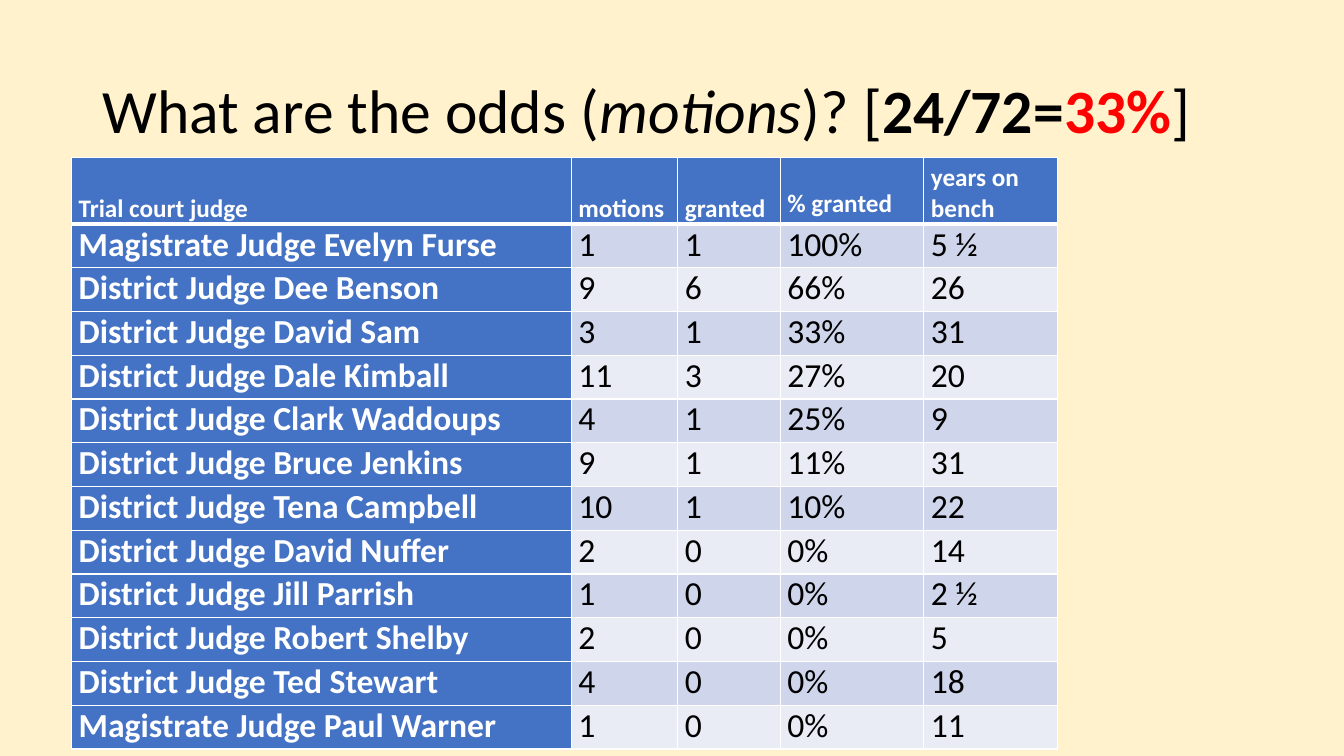
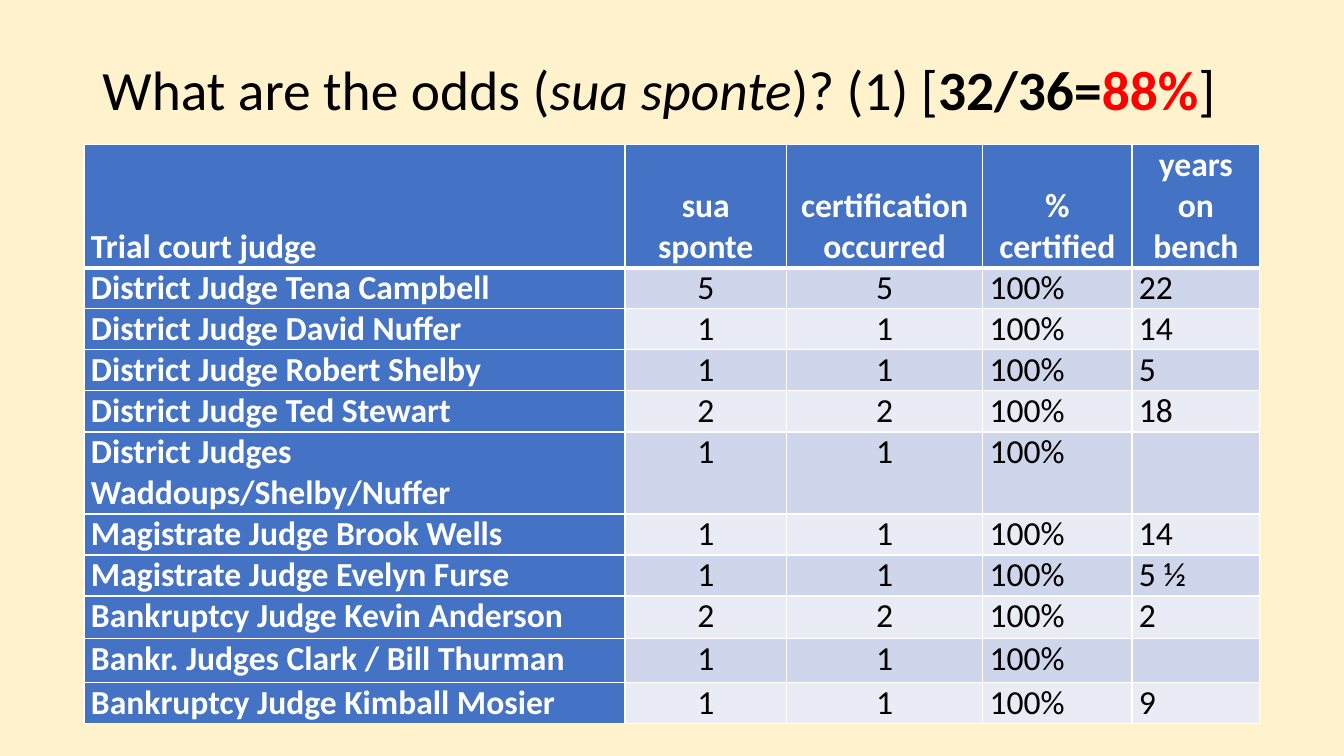
from lxml import etree
from pptx import Presentation
from pptx.dml.color import RGBColor
from pptx.enum.text import MSO_ANCHOR, MSO_AUTO_SIZE, PP_ALIGN
from pptx.oxml.ns import qn
from pptx.util import Pt

CREAM = RGBColor(0xFF, 0xF2, 0xCC)
BLUE = RGBColor(0x44, 0x72, 0xC4)
BAND_DARK = RGBColor(0xCF, 0xD5, 0xEA)
BAND_LIGHT = RGBColor(0xE9, 0xEB, 0xF5)
WHITE = RGBColor(0xFF, 0xFF, 0xFF)
BLACK = RGBColor(0, 0, 0)
RED = RGBColor(0xFF, 0, 0)

FONT = "Calibri"
LEFT, CENTER = PP_ALIGN.LEFT, PP_ALIGN.CENTER
CELL_FORMAT = {"margin_left": Pt(5), "margin_right": Pt(5), "margin_top": 0, "margin_bottom": 0}
TITLE_FORMAT = {
    "word_wrap": True,
    "auto_size": MSO_AUTO_SIZE.NONE,
    "vertical_anchor": MSO_ANCHOR.MIDDLE,
}

MOTIONS = [
    ("Trial court judge", "motions", "granted", "% granted", "years on bench"),
    ("Magistrate Judge Evelyn Furse", "1", "1", "100%", "5 ½"),
    ("District Judge Dee Benson", "9", "6", "66%", "26"),
    ("District Judge David Sam", "3", "1", "33%", "31"),
    ("District Judge Dale Kimball", "11", "3", "27%", "20"),
    ("District Judge Clark Waddoups", "4", "1", "25%", "9"),
    ("District Judge Bruce Jenkins", "9", "1", "11%", "31"),
    ("District Judge Tena Campbell", "10", "1", "10%", "22"),
    ("District Judge David Nuffer", "2", "0", "0%", "14"),
    ("District Judge Jill Parrish", "1", "0", "0%", "2 ½"),
    ("District Judge Robert Shelby", "2", "0", "0%", "5"),
    ("District Judge Ted Stewart", "4", "0", "0%", "18"),
    ("Magistrate Judge Paul Warner", "1", "0", "0%", "11"),
]
SUA_SPONTE = [
    ("Trial court judge", "sua sponte", "certification occurred", "% certified", "years on bench"),
    ("District Judge Tena Campbell", "5", "5", "100%", "22"),
    ("District Judge David Nuffer", "1", "1", "100%", "14"),
    ("District Judge Robert Shelby", "1", "1", "100%", "5"),
    ("District Judge Ted Stewart", "2", "2", "100%", "18"),
    ("District Judges Waddoups/Shelby/Nuffer", "1", "1", "100%", ""),
    ("Magistrate Judge Brook Wells", "1", "1", "100%", "14"),
    ("Magistrate Judge Evelyn Furse", "1", "1", "100%", "5 ½"),
    ("Bankruptcy Judge Kevin Anderson", "2", "2", "100%", "2"),
    ("Bankr. Judges Clark / Bill Thurman", "1", "1", "100%", ""),
    ("Bankruptcy Judge Kimball Mosier", "1", "1", "100%", "9"),
]


def set_format(obj, values):
    for name, value in values.items():
        setattr(obj, name, value)


def add_run(p, text, size, color=BLACK, **style):
    r = p.add_run()
    r.text = text
    set_format(r.font, {"name": FONT, "size": Pt(size), "bold": False, "italic": False, **style})
    r.font.color.rgb = color


def add_title(s, size, width, height, topic, tail, ratio, percent):
    sp = s.shapes.title
    set_format(sp, {"left": Pt(66), "top": Pt(28.8), "width": Pt(width), "height": Pt(height)})
    tf = sp.text_frame
    set_format(tf, TITLE_FORMAT)
    p = tf.paragraphs[0]
    set_format(p, {"alignment": LEFT, "line_spacing": 0.9})
    add_run(p, "What are the odds (", size)
    add_run(p, topic, size, italic=True)
    add_run(p, tail, size)
    add_run(p, ratio, size, bold=True)
    add_run(p, percent, size, RED, bold=True)
    add_run(p, "]", size)


def set_borders(cell, top, bottom):
    tc_pr = cell._tc.get_or_add_tcPr()
    for side, width in {"L": 1, "R": 1, "T": top, "B": bottom}.items():
        ln = etree.SubElement(tc_pr, qn(f"a:ln{side}"), w=str(Pt(width)))
        fill = etree.SubElement(ln, qn("a:solidFill"))
        etree.SubElement(fill, qn("a:srgbClr"), val=str(WHITE))


def fill_cell(cell, text, row, col, size, align):
    header = row == 0
    label = header or col == 0
    set_borders(cell, 3 if row == 1 else 1, 3 if header else 1)
    cell.fill.solid()
    cell.fill.fore_color.rgb = BLUE if label else BAND_DARK if row % 2 else BAND_LIGHT
    set_format(cell, CELL_FORMAT)
    cell.vertical_anchor = MSO_ANCHOR.BOTTOM if header else MSO_ANCHOR.TOP
    p = cell.text_frame.paragraphs[0]
    p.alignment = align
    if text:
        add_run(p, text, size, WHITE if label else BLACK, bold=label)


def add_judge_table(s, rows, left, top, widths, heights, header_size, header_aligns, body_aligns):
    frame = s.shapes.add_table(
        len(rows), len(widths), Pt(left), Pt(top), Pt(sum(widths)), Pt(sum(heights))
    )
    table = frame.table
    table.first_col = True
    for column, width in zip(table.columns, widths):
        column.width = Pt(width)
    for i, (values, height) in enumerate(zip(rows, heights)):
        table.rows[i].height = Pt(height)
        size, aligns = (24, body_aligns) if i else (header_size, header_aligns)
        for j, (text, align) in enumerate(zip(values, aligns)):
            fill_cell(table.cell(i, j), text, i, j, size, align)
    return table


def add_motions_slide(prs):
    s = prs.slides.add_slide(prs.slide_layouts[5])
    add_title(s, 44, 828, 104.4, "motions", ")? [", "24/72=", "33%")
    heights = [47.8] + [31.25] * 12
    table = add_judge_table(
        s, MOTIONS, 51.2, 112.3, [357, 76, 73.3, 102.5, 95.2], heights, 18, [LEFT] * 5, [LEFT] * 5
    )
    table.cell(0, 3).margin_bottom = Pt(3.6)


def add_sua_sponte_slide(prs):
    s = prs.slides.add_slide(prs.slide_layouts[5])
    add_title(s, 39.6, 846, 74.9, "sua sponte", ")? (1) [", "32/36=", "88%")
    heights = [87.9] + [29.3] * 4 + [58.6] + [29.3] * 2 + [30.2, 31.7, 29.3]
    add_judge_table(
        s, SUA_SPONTE, 60, 103.4, [386.5, 115.3, 140.2, 106.6, 91.4], heights, 24,
        [LEFT] + [CENTER] * 4, [LEFT, CENTER, CENTER, LEFT, LEFT],
    )


def main():
    prs = Presentation()
    set_format(prs, {"slide_width": Pt(960), "slide_height": Pt(540)})
    background = prs.slide_master.background.fill
    background.solid()
    background.fore_color.rgb = CREAM
    add_motions_slide(prs)
    add_sua_sponte_slide(prs)
    prs.save("out.pptx")


if __name__ == "__main__":
    main()
